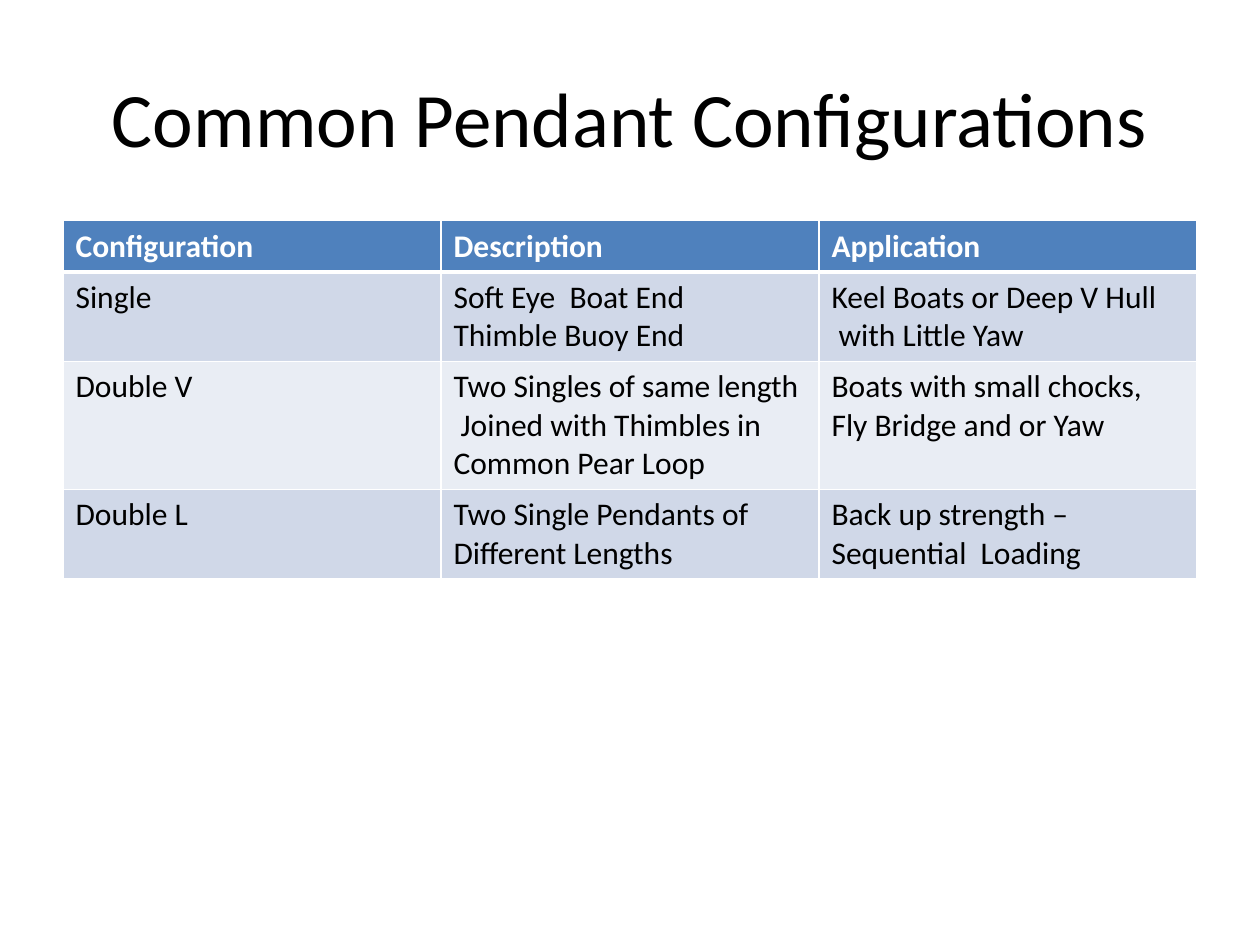
from lxml import etree
from pptx import Presentation
from pptx.dml.color import RGBColor
from pptx.enum.text import MSO_ANCHOR, PP_ALIGN
from pptx.oxml.ns import qn
from pptx.util import Cm, Pt

MIDDLE = MSO_ANCHOR.MIDDLE
CENTER = PP_ALIGN.CENTER
FONT = "Calibri"
WHITE, BLACK = "FFFFFF", "000000"
HEADER_FILL = "4F81BD"
BAND_FILLS = ["D0D8E8", "E9EDF4"]
ROWS = [
    ["Configuration", "Description", "Application"],
    ["Single", "Soft Eye  Boat End\nThimble Buoy End",
     "Keel Boats or Deep V Hull\n with Little Yaw"],
    ["Double V",
     "Two Singles of same length\n Joined with Thimbles in Common Pear Loop",
     "Boats with small chocks, Fly Bridge and or Yaw"],
    ["Double L", "Two Single Pendants of Different Lengths",
     "Back up strength – Sequential  Loading"],
]
ROW_HEIGHTS = [1.03, 1.8, 2.57, 1.8]


def color(value):
    return RGBColor.from_string(value)


def format_text(tf, size, value, bold=False):
    for p in tf.paragraphs:
        for r in p.runs:
            r.font.name = FONT
            r.font.size = Pt(size)
            r.font.bold = bold
            r.font.color.rgb = color(value)


def add_borders(cell, top, bottom):
    tcPr = cell._tc.get_or_add_tcPr()
    for side, width in (("L", 1), ("R", 1), ("T", top), ("B", bottom)):
        ln = etree.SubElement(tcPr, qn(f"a:ln{side}"), w=str(Pt(width)))
        fill = etree.SubElement(ln, qn("a:solidFill"))
        etree.SubElement(fill, qn("a:srgbClr"), val=WHITE)


def add_title(s, text, left, top, width, height):
    sp = s.shapes.title
    sp.left, sp.top, sp.width, sp.height = map(Cm, (left, top, width, height))
    tf = sp.text_frame
    tf.text = text
    tf.vertical_anchor = MIDDLE
    tf.paragraphs[0].alignment = CENTER
    format_text(tf, 44, BLACK)


def add_configurations(s, rows, heights, left, top, width):
    columns = len(rows[0])
    table = s.shapes.add_table(len(rows), columns, Cm(left), Cm(top),
                               Cm(width), Cm(sum(heights))).table
    for column in table.columns:
        column.width = Cm(width / columns)
    for i, (texts, height) in enumerate(zip(rows, heights)):
        header = i == 0
        table.rows[i].height = Cm(height)
        for cell, text in zip(table.rows[i].cells, texts):
            add_borders(cell, 3 if i == 1 else 1, 3 if header else 1)
            cell.fill.solid()
            cell.fill.fore_color.rgb = color(
                HEADER_FILL if header else BAND_FILLS[(i - 1) % 2])
            cell.text_frame.text = text
            format_text(cell.text_frame, 18, WHITE if header else BLACK, header)


def main():
    prs = Presentation()
    prs.slide_width, prs.slide_height = Cm(25.4), Cm(19.05)
    s = prs.slides.add_slide(prs.slide_layouts[5])
    add_title(s, "Common Pendant Configurations", 1.27, 0.76, 22.86, 3.18)
    add_configurations(s, ROWS, ROW_HEIGHTS, 1.27, 4.45, 22.86)
    prs.save("out.pptx")


if __name__ == "__main__":
    main()
